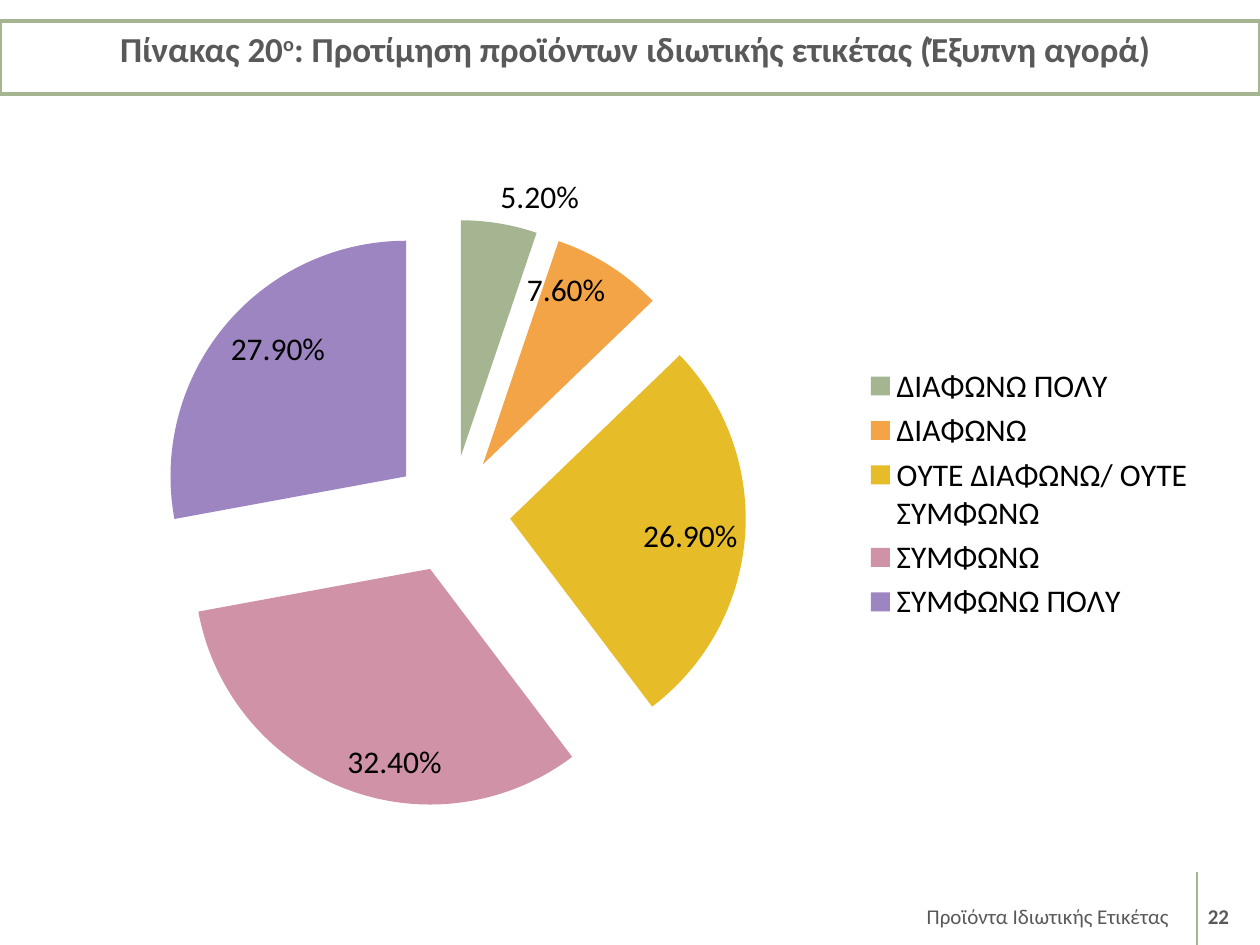
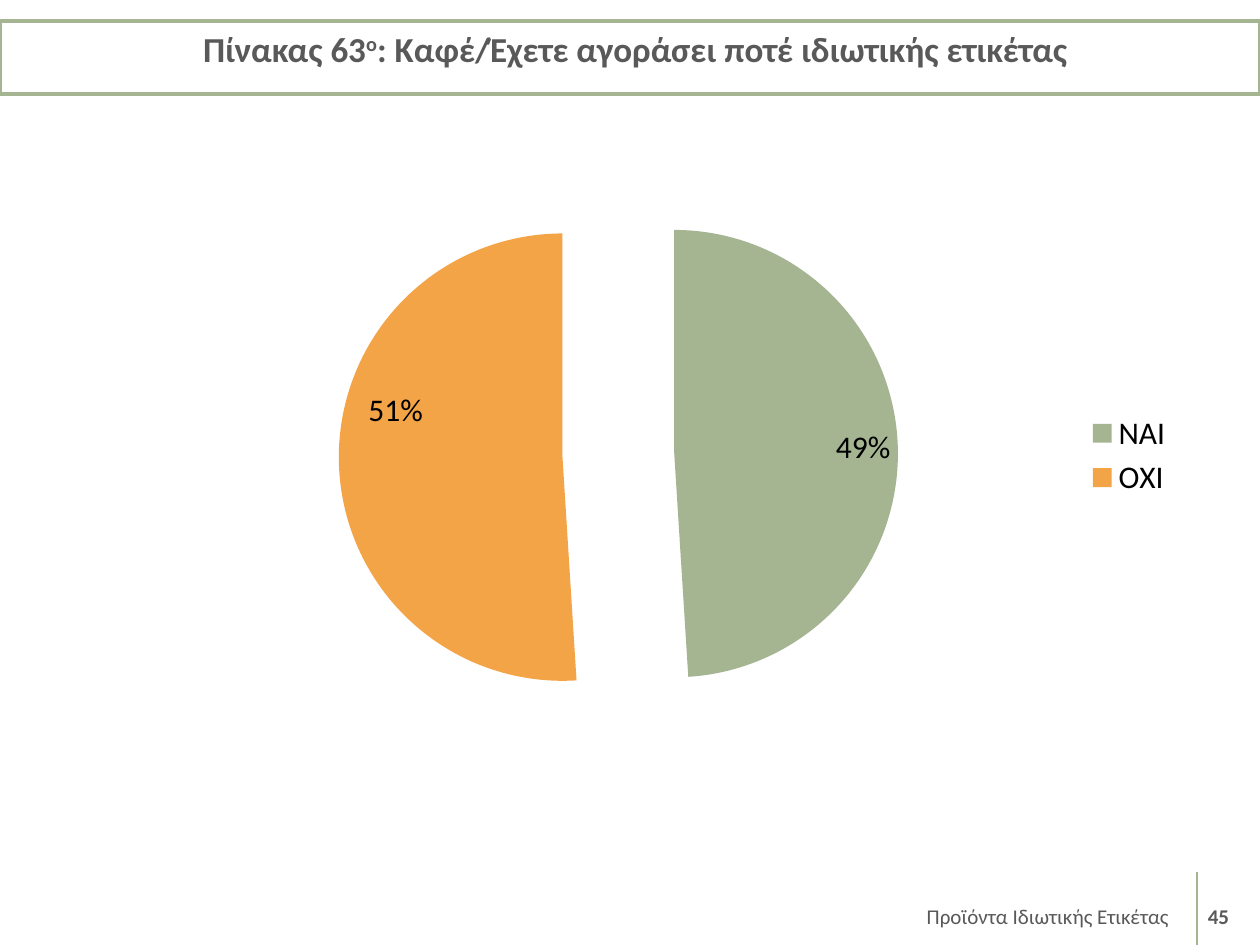
from lxml import etree
from pptx import Presentation
from pptx.chart.data import CategoryChartData
from pptx.dml.color import RGBColor
from pptx.enum.chart import XL_CHART_TYPE, XL_LABEL_POSITION, XL_LEGEND_POSITION
from pptx.enum.shapes import MSO_CONNECTOR
from pptx.enum.text import MSO_ANCHOR, MSO_AUTO_SIZE, PP_ALIGN
from pptx.oxml.ns import qn
from pptx.util import Emu, Pt

PIE = XL_CHART_TYPE.PIE
INSIDE, OUTSIDE = XL_LABEL_POSITION.INSIDE_END, XL_LABEL_POSITION.OUTSIDE_END
RIGHT_KEY = XL_LEGEND_POSITION.RIGHT
STRAIGHT = MSO_CONNECTOR.STRAIGHT
TOP, BOTTOM = MSO_ANCHOR.TOP, MSO_ANCHOR.BOTTOM
NO_FIT = MSO_AUTO_SIZE.NONE
CENTER, RIGHT = PP_ALIGN.CENTER, PP_ALIGN.RIGHT

FONT = "Calibri"
INK, BLACK, WHITE, GREEN = "595959", "000000", "FFFFFF", "A5B592"
SLICES = [GREEN, "F3A447", "E7BC29", "D092A7", "9C85C0"]
WIDTH, HEIGHT = 1260, 945
HEAD = (0, 21, WIDTH, 73)
FOOT = (788, 870, 472, 75)
NOTE = "Προϊόντα Ιδιωτικής Ετικέτας"


def px(n):
    return Emu(round(n * 914400 / 126))


def color(code):
    return RGBColor.from_string(code)


def place(shape, box):
    shape.left, shape.top, shape.width, shape.height = map(px, box)


def style(font, size, ink, bold=False):
    font.name, font.size, font.bold = FONT, Pt(size), bold
    font.color.rgb = color(ink)


def write(shape, *parts, size=12, ink=INK, bold=False, align=CENTER,
          anchor=BOTTOM, left=13, right=13, before=0, raised=None):
    frame = shape.text_frame
    frame.word_wrap = True
    frame.auto_size = NO_FIT
    frame.vertical_anchor = anchor
    frame.margin_left, frame.margin_right = px(left), px(right)
    frame.margin_top = frame.margin_bottom = px(6)
    para = frame.paragraphs[0]
    para.alignment = align
    para.space_before = Pt(before)
    for i, part in enumerate(parts):
        run = para.add_run()
        run.text = part
        style(run.font, size, ink, bold)
        if i == raised:
            run._r.get_or_add_rPr().set("baseline", "30000")


def header(slide, box, number, topic):
    title = slide.shapes.title
    place(title, box)
    title.fill.solid()
    title.fill.fore_color.rgb = color(WHITE)
    title.line.color.rgb = color(GREEN)
    title.line.width = Pt(2)
    write(title, f"Πίνακας {number}", "ο", f": {topic}", size=20, bold=True,
          anchor=TOP, left=24, before=6, raised=1)


def footer(slide, box, page):
    x, y, w, h = box
    shapes = slide.shapes
    note = shapes.add_textbox(*map(px, (x, y, 399, 65)))
    write(note, NOTE, align=RIGHT, right=18)
    count = shapes.add_textbox(*map(px, (x + 399, y, 63, 65)))
    write(count, page, bold=True)
    rule = shapes.add_connector(
        STRAIGHT, *map(px, (x + 409, y + 2, x + 409, y + h)))
    rule.line.color.rgb = color(GREEN)
    rule.line.width = Pt(0.75)
    etree.SubElement(rule._element.spPr, qn("a:effectLst"))


def layout(**values):
    root = etree.Element(qn("c:layout"))
    manual = etree.SubElement(root, qn("c:manualLayout"))
    for name, value in values.items():
        etree.SubElement(manual, qn(f"c:{name}")).set("val", str(value))
    return root


def frame_plot(chart, box, plot):
    x, y, side = plot
    _, _, w, h = box
    area = chart._chartSpace.find(f".//{qn('c:plotArea')}")
    for old in area.findall(qn("c:layout")):
        area.remove(old)
    area.insert(0, layout(
        layoutTarget="inner", xMode="edge", yMode="edge",
        x=round(x / w, 2), y=round(y / h, 2),
        w=round(side / w, 2), h=round(side / h, 2)))


def pie(slide, box, plot, data, form, outer=(), moves=None):
    source = CategoryChartData(number_format=form)
    source.categories = list(data)
    source.add_series("Series 1", list(data.values()))
    chart = slide.shapes.add_chart(PIE, *map(px, box), source).chart
    chart.has_title = False
    style(chart.font, 18, BLACK)
    chart.has_legend = True
    chart.legend.position = RIGHT_KEY
    chart.legend.include_in_layout = False
    frame_plot(chart, box, plot)

    chart.plots[0].vary_by_categories = True
    series = chart.plots[0].series[0]
    burst = etree.Element(qn("c:explosion"))
    burst.set("val", "25")
    series._element.find(qn("c:tx")).addnext(burst)
    for i, code in zip(range(len(data)), SLICES):
        fill = series.points[i].format.fill
        fill.solid()
        fill.fore_color.rgb = color(code)

    labels = series.data_labels
    labels.show_value = True
    labels.number_format = form
    labels.number_format_is_linked = False
    labels.position = INSIDE
    for i in outer:
        series.points[i].data_label.position = OUTSIDE
    for i, (dx, dy) in (moves or {}).items():
        series.points[i].data_label.position = INSIDE
        for label in series._element.iter(qn("c:dLbl")):
            mark = label.find(qn("c:idx"))
            if mark.get("val") == str(i):
                mark.addnext(layout(x=round(dx / box[2], 2),
                                    y=round(dy / box[3], 2)))


def page(deck, number, topic, count, **chart):
    slide = deck.slides.add_slide(deck.slide_layouts[5])
    header(slide, HEAD, number, topic)
    footer(slide, FOOT, count)
    pie(slide, **chart)


def main():
    deck = Presentation()
    deck.slide_width, deck.slide_height = px(WIDTH), px(HEIGHT)
    page(deck, 20, "Προτίμηση προϊόντων ιδιωτικής ετικέτας (Έξυπνη αγορά)",
         "22", box=(53, 158, 1155, 672), plot=(99, 62, 592), form="0.00%",
         outer=[0], data={
             "ΔΙΑΦΩΝΩ ΠΟΛΎ": 0.052,
             "ΔΙΑΦΩΝΩ": 0.076,
             "ΟΥΤΕ ΔΙΑΦΩΝΩ/ ΟΥΤΕ ΣΥΜΦΩΝΩ": 0.269,
             "ΣΥΜΦΩΝΩ": 0.324,
             "ΣΥΜΦΩΝΩ ΠΟΛΎ": 0.279,
         })
    page(deck, 63, "Καφέ/Έχετε αγοράσει ποτέ ιδιωτικής ετικέτας",
         "45", box=(84, 158, 1102, 595), plot=(250, 19, 560), form="0%",
         moves={1: (25, -55)}, data={"NAI": 0.49, "OXI": 0.51})
    deck.save("out.pptx")


if __name__ == "__main__":
    main()
